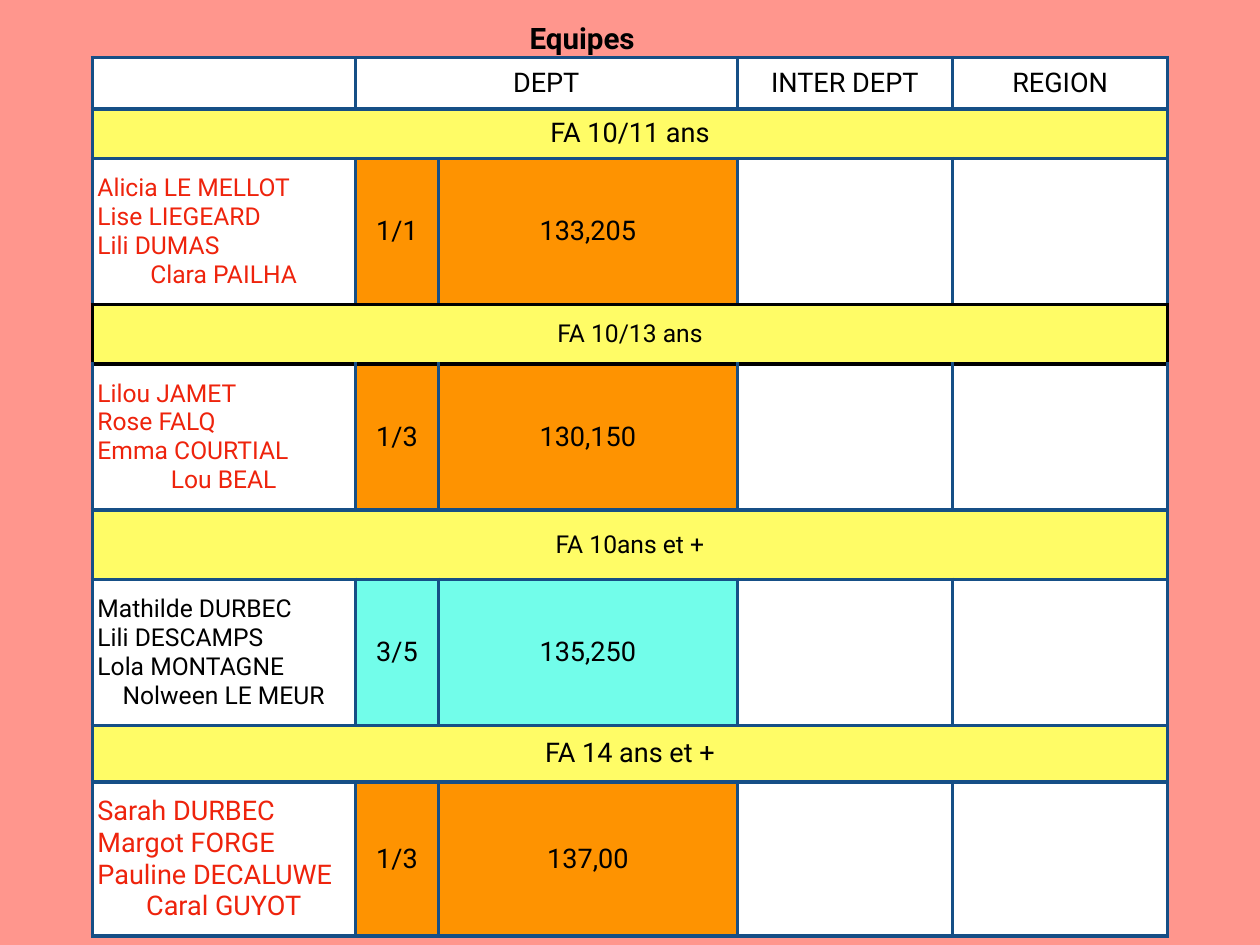
from dataclasses import dataclass

from lxml import etree
from pptx import Presentation
from pptx.dml.color import RGBColor
from pptx.enum.text import MSO_ANCHOR, PP_ALIGN
from pptx.oxml.ns import qn
from pptx.util import Inches, Pt

LEFT, CENTER = PP_ALIGN.LEFT, PP_ALIGN.CENTER
MIDDLE = MSO_ANCHOR.MIDDLE


@dataclass(frozen=True)
class Theme:
    font: str = "Roboto"
    page: str = "FF968D"
    ink: str = "000000"
    winner: str = "EE230C"
    border: str = "164F86"
    plain: str = "FFFFFF"
    category: str = "FFFC66"
    gold: str = "FE9301"
    podium: str = "72FDEA"
    title_size: int = 24
    large: int = 22
    small: int = 20
    border_width: int = 3


THEME = Theme()
INSET = Inches(0.06)
MARGINS = {f"margin_{side}": INSET for side in ("left", "right", "top", "bottom")}
COLUMN_WIDTHS = [2.97, 0.94, 3.37, 2.43, 2.43]
HEADER_HEIGHT = 0.58
BLACK_ROW = 3

TEAMS = [
    {"category": "FA 10/11 ans", "heights": (0.56, 1.65),
     "sizes": (THEME.large, THEME.small), "color": THEME.winner, "fill": THEME.gold,
     "names": ["Alicia LE MELLOT", "Lise LIEGEARD", "Lili DUMAS", "Clara PAILHA"],
     "rank": "1/1", "score": "133,205"},
    {"category": "FA 10/13 ans", "heights": (0.67, 1.65),
     "sizes": (THEME.small, THEME.small), "color": THEME.winner, "fill": THEME.gold,
     "names": ["Lilou JAMET", "Rose FALQ", "Emma COURTIAL", "Lou BEAL"],
     "rank": "1/3", "score": "130,150"},
    {"category": "FA 10ans et +", "heights": (0.78, 1.65),
     "sizes": (THEME.small, THEME.small), "color": THEME.ink, "fill": THEME.podium,
     "names": ["Mathilde DURBEC", "Lili DESCAMPS", "Lola MONTAGNE", "Nolween LE MEUR"],
     "rank": "3/5", "score": "135,250"},
    {"category": "FA 14 ans et +", "heights": (0.64, 1.74),
     "sizes": (THEME.large, THEME.large), "color": THEME.winner, "fill": THEME.gold,
     "names": ["Sarah DURBEC", "Margot FORGE", "Pauline DECALUWE", "Caral GUYOT"],
     "rank": "1/3", "score": "137,00"},
]


def apply(target, values):
    for name, value in values.items():
        setattr(target, name, value)


def write(frame, lines, size, color=THEME.ink, bold=False):
    for index, line in enumerate(lines):
        para = frame.paragraphs[0] if index == 0 else frame.add_paragraph()
        para.alignment = CENTER if index == len(lines) - 1 else LEFT
        span = para.add_run()
        span.text = line
        apply(span.font, {"name": THEME.font, "size": Pt(size), "bold": bold})
        span.font.color.rgb = RGBColor.from_string(color)


def draw_border(cell, side, color):
    properties = cell._tc.get_or_add_tcPr()
    line = etree.SubElement(properties, qn(f"a:ln{side}"), w=str(Pt(THEME.border_width)))
    fill = etree.SubElement(line, qn("a:solidFill"))
    etree.SubElement(fill, qn("a:srgbClr"), val=color)


def style_cell(cell, row):
    black_sides = {BLACK_ROW - 1: "B", BLACK_ROW: "LRTB", BLACK_ROW + 1: "T"}.get(row, "")
    for side in "LRTB":
        draw_border(cell, side, THEME.ink if side in black_sides else THEME.border)
    apply(cell, {**MARGINS, "vertical_anchor": MIDDLE})
    paint(cell, THEME.plain)


def paint(cell, color):
    cell.fill.solid()
    cell.fill.fore_color.rgb = RGBColor.from_string(color)


def add_title(page, left, top, width, height):
    box = page.shapes.add_textbox(Inches(left), Inches(top), Inches(width), Inches(height))
    apply(box.text_frame, {**MARGINS, "vertical_anchor": MIDDLE, "word_wrap": False})
    write(box.text_frame, ["Equipes"], THEME.title_size, bold=True)


def add_header(table):
    table.cell(0, 1).merge(table.cell(0, 2))
    for column, label in ((1, "DEPT"), (3, "INTER DEPT"), (4, "REGION")):
        write(table.cell(0, column).text_frame, [label], THEME.large)


def add_team(table, row, team):
    category_size, names_size = team["sizes"]
    last = len(COLUMN_WIDTHS) - 1
    for column in range(last + 1):
        paint(table.cell(row, column), THEME.category)
    table.cell(row, 0).merge(table.cell(row, last))
    write(table.cell(row, 0).text_frame, [team["category"]], category_size)
    write(table.cell(row + 1, 0).text_frame, team["names"], names_size, team["color"])
    for column, key in ((1, "rank"), (2, "score")):
        cell = table.cell(row + 1, column)
        paint(cell, team["fill"])
        write(cell.text_frame, [team[key]], THEME.large)


def add_results(page, left, top):
    heights = [HEADER_HEIGHT] + [height for team in TEAMS for height in team["heights"]]
    frame = page.shapes.add_table(
        len(heights), len(COLUMN_WIDTHS), Inches(left), Inches(top),
        Inches(sum(COLUMN_WIDTHS)), Inches(sum(heights)))
    table = frame.table
    apply(table, {"first_row": False, "horz_banding": False})
    for column, width in zip(table.columns, COLUMN_WIDTHS):
        column.width = Inches(width)
    for index, height in enumerate(heights):
        table.rows[index].height = Inches(height)
        for cell in table.rows[index].cells:
            style_cell(cell, index)
    add_header(table)
    for index, team in enumerate(TEAMS):
        add_team(table, 1 + 2 * index, team)


def main():
    deck = Presentation()
    apply(deck, {"slide_width": Inches(14.22), "slide_height": Inches(10.67)})
    page = deck.slides.add_slide(deck.slide_layouts[6])
    page.background.fill.solid()
    page.background.fill.fore_color.rgb = RGBColor.from_string(THEME.page)
    add_title(page, 5.82, 0.18, 1.5, 0.5)
    add_results(page, 1.04, 0.65)
    deck.save("out.pptx")


if __name__ == "__main__":
    main()
